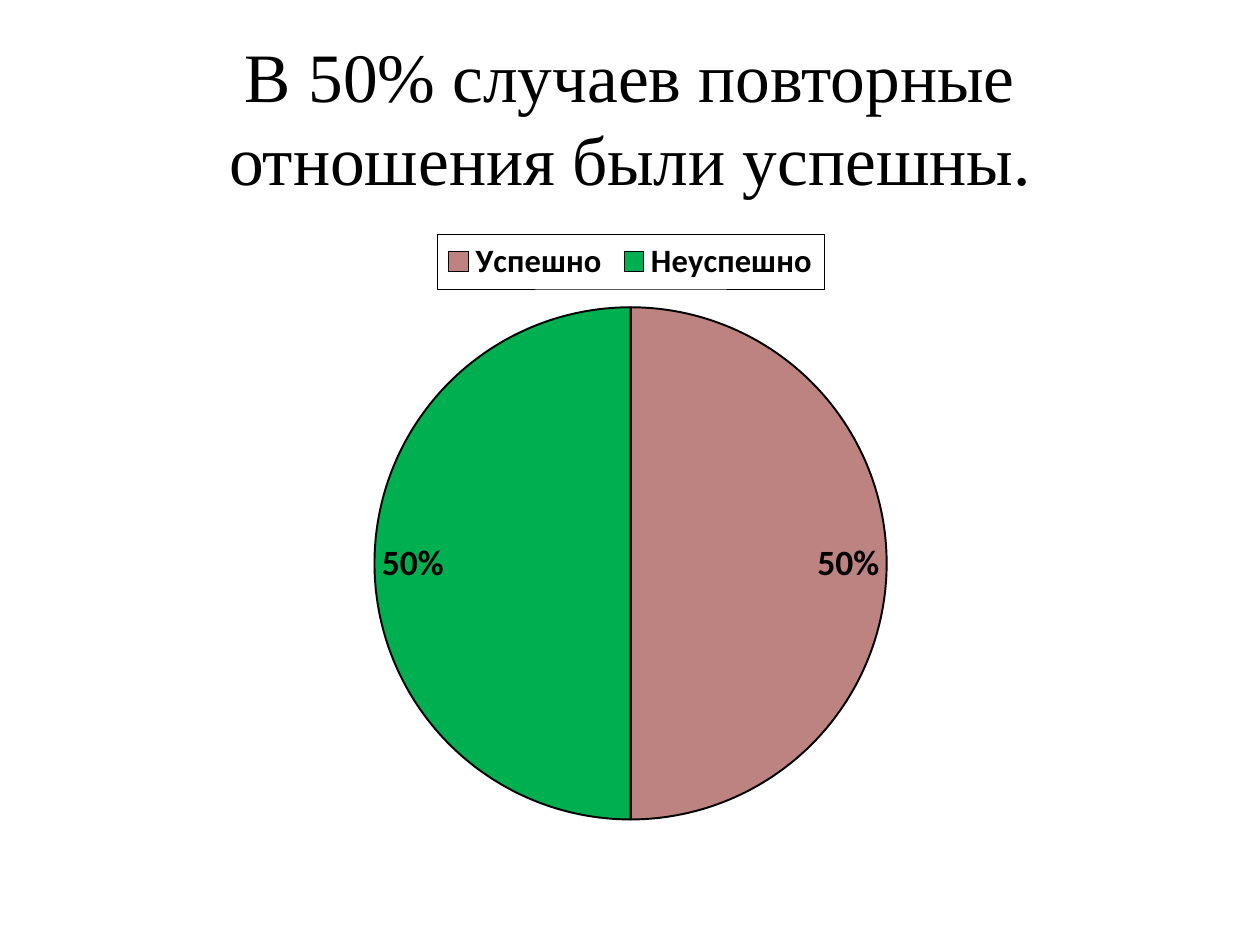
from dataclasses import dataclass

from pptx import Presentation
from pptx.chart.data import CategoryChartData
from pptx.dml.color import RGBColor
from pptx.enum.chart import XL_CHART_TYPE as ChartType
from pptx.enum.chart import XL_LABEL_POSITION as LabelPosition
from pptx.enum.chart import XL_LEGEND_POSITION as LegendPosition
from pptx.enum.text import MSO_ANCHOR as Anchor
from pptx.enum.text import MSO_AUTO_SIZE as AutoSize
from pptx.enum.text import PP_ALIGN as Align
from pptx.oxml import parse_xml
from pptx.oxml.ns import nsdecls
from pptx.util import Pt


def rgb(value):
    return RGBColor.from_string(value)


def manual_layout(x, y, w, h, target=""):
    return parse_xml(
        f'<c:layout {nsdecls("c")}><c:manualLayout>{target}'
        '<c:xMode val="edge"/><c:yMode val="edge"/>'
        f'<c:x val="{x}"/><c:y val="{y}"/><c:w val="{w}"/><c:h val="{h}"/>'
        "</c:manualLayout></c:layout>"
    )


@dataclass
class SlideBuilder:
    """Holds the style and the current slide."""

    slide: object
    title_font: str = "Times New Roman"
    chart_font: str = "Calibri"
    ink: str = "000000"

    def style(self, font, name, size, bold=False):
        font.name, font.size, font.bold = name, Pt(size), bold
        font.color.rgb = rgb(self.ink)

    def title(self, text, left, top, width, height):
        heading = self.slide.shapes.title
        heading.left, heading.top = Pt(left), Pt(top)
        heading.width, heading.height = Pt(width), Pt(height)
        frame = heading.text_frame
        frame.word_wrap = True
        frame.auto_size = AutoSize.NONE
        frame.vertical_anchor = Anchor.MIDDLE
        paragraph = frame.paragraphs[0]
        paragraph.alignment = Align.CENTER
        run = paragraph.add_run()
        run.text = text
        self.style(run.font, self.title_font, 39.6)

    def pie(self, outcomes, left, top, width, height):
        shares = CategoryChartData()
        shares.categories = [name for name, *_ in outcomes]
        shares.add_series("Series 1", [share for _, share, *_ in outcomes])
        chart = self.slide.shapes.add_chart(
            ChartType.PIE, Pt(left), Pt(top), Pt(width), Pt(height), shares
        ).chart
        chart.has_title = False
        self.style(chart.font, self.chart_font, 20.3, True)
        plot = chart.plots[0]
        plot.vary_by_categories = True
        self.slices(plot.series[0], outcomes)
        self.percent_labels(plot)
        self.legend(chart)
        area = chart.element.xpath("c:chart/c:plotArea")[0]
        for layout in area.xpath("c:layout"):
            area.remove(layout)
        inner = '<c:layoutTarget val="inner"/>'
        area.insert(0, manual_layout(0.22, 0.13, 0.56, 0.84, inner))

    def slices(self, series, outcomes):
        for index, (_, _, color, opacity) in enumerate(outcomes):
            look = series.points[index].format
            look.fill.solid()
            look.fill.fore_color.rgb = rgb(color)
            look.line.color.rgb = rgb(self.ink)
            look.line.width = Pt(1.11)
            if opacity < 100:
                tint = series.points[index].format.fill.fore_color
                tint.rgb = rgb(color)
                fill = series.format.fill
                fill.solid()
                fill.fore_color.rgb = rgb(color)
                for swatch in self.swatches(index):
                    swatch.append(parse_xml(
                        f'<a:alpha {nsdecls("a")} val="{opacity * 1000}"/>'
                    ))

    def swatches(self, index):
        chart = self.slide.shapes[-1].chart
        return chart.element.xpath(
            f'//c:dPt[c:idx/@val="{index}"]/c:spPr/a:solidFill/a:srgbClr'
        )

    def percent_labels(self, plot):
        plot.has_data_labels = True
        labels = plot.data_labels
        labels.show_percentage = True
        labels.show_value = False
        labels.number_format = "0%"
        labels.number_format_is_linked = False
        labels.position = LabelPosition.INSIDE_END
        self.style(labels.font, self.chart_font, 20.3, True)

    def legend(self, chart):
        chart.has_legend = True
        legend = chart.legend
        legend.position = LegendPosition.TOP
        legend.include_in_layout = False
        self.style(legend.font, self.chart_font, 18.6, True)
        box = chart.element.xpath("c:chart/c:legend")[0]
        for layout in box.xpath("c:layout"):
            box.remove(layout)
        box.xpath("c:overlay")[0].addprevious(manual_layout(0.29, 0.01, 0.42, 0.09))
        box.xpath("c:txPr")[0].addprevious(parse_xml(
            f'<c:spPr {nsdecls("c", "a")}><a:noFill/><a:ln w="3175"><a:solidFill>'
            f'<a:srgbClr val="{self.ink}"/></a:solidFill></a:ln></c:spPr>'
        ))


def main():
    deck = Presentation()
    deck.slide_width, deck.slide_height = Pt(720), Pt(540)
    builder = SlideBuilder(deck.slides.add_slide(deck.slide_layouts[5]))
    builder.title("В 50% случаев повторные отношения были успешны.", 36, 21.6, 648, 90)
    outcomes = [("Успешно", 50, "953735", 62), ("Неуспешно", 50, "00B050", 100)]
    builder.pie(outcomes, 97.2, 130.3, 526.3, 348.5)
    deck.save("out.pptx")


if __name__ == "__main__":
    main()
